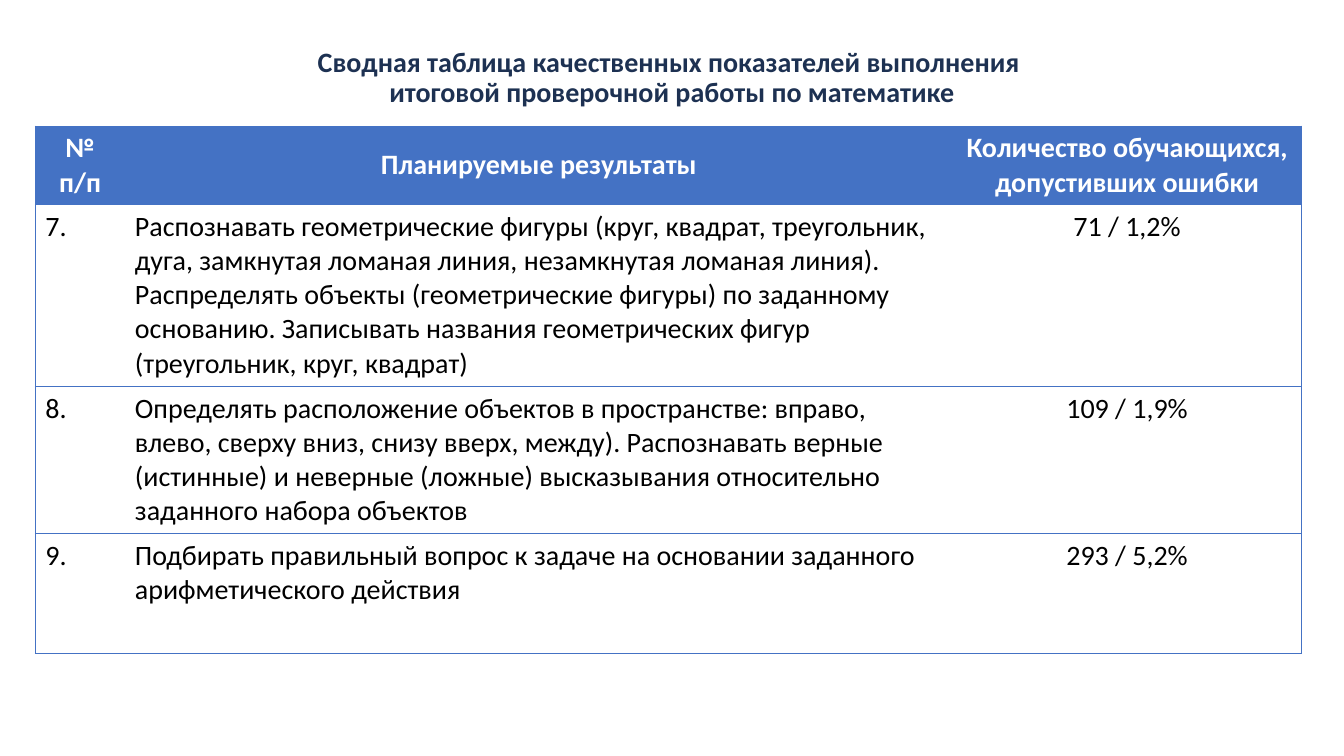
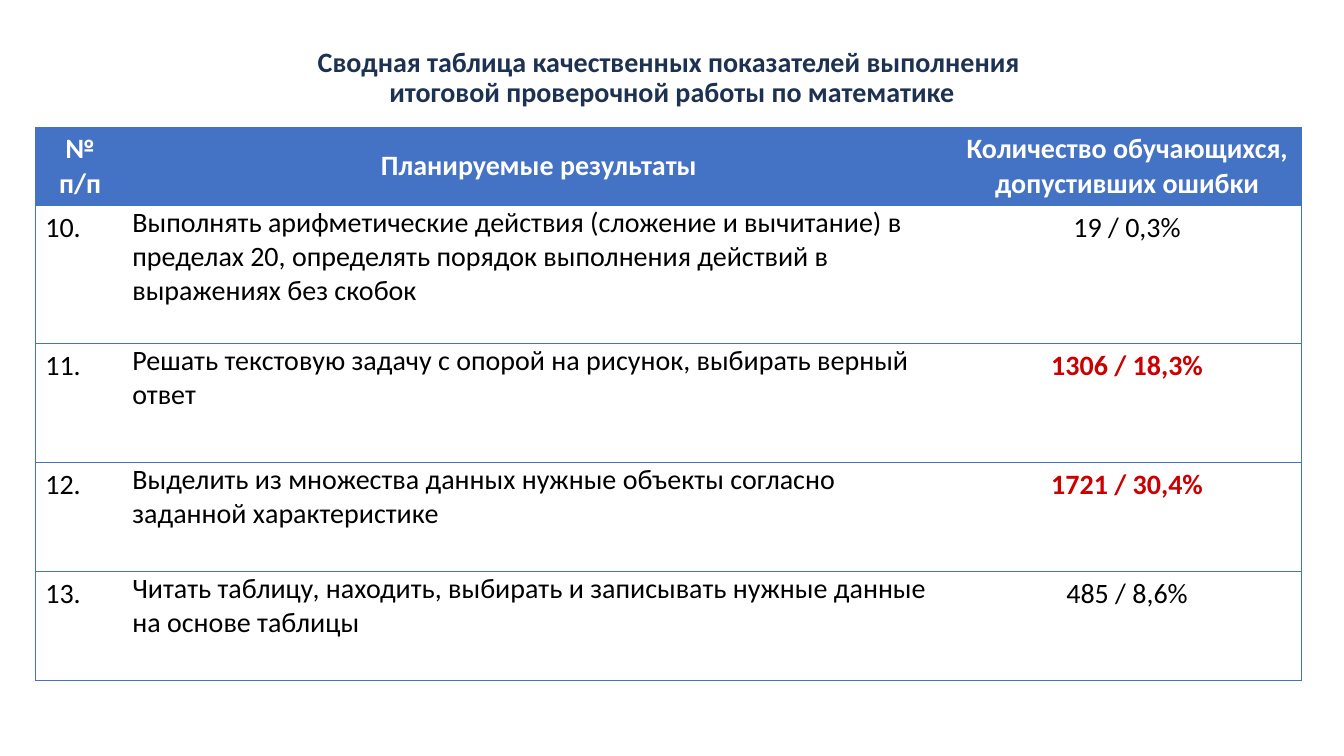
import pptx
import pptx.util
import pptx.dml.color
import pptx.enum.text
import pptx.oxml
import pptx.oxml.ns

Pt = pptx.util.Pt
RGB = pptx.dml.color.RGBColor.from_string
PP_ALIGN = pptx.enum.text.PP_ALIGN
MSO_ANCHOR = pptx.enum.text.MSO_ANCHOR

COLORS = {"title": "1D3152", "accent": "4472C4", "header": "FFFFFF",
          "body": "000000", "alert": "CC0000"}
FONT = "Calibri"
NO_STYLE = "{2D5ABB26-0587-4C30-8999-92F81FD0307C}"
TITLE = ("Сводная таблица качественных показателей выполнения \v"
         "итоговой проверочной работы по математике")
HEADER = ["№ п/п", "Планируемые результаты", "Количество обучающихся, допустивших ошибки"]
HEADER_HEIGHT = 56
COL_WIDTHS = [64, 591.5, 249]
LEFT = 25.2

# Each row: height, number, planned result, errors, alert
SLIDES = [
    {"top": 90, "tight": False, "rows": [
        (130, "7.", "Распознавать геометрические фигуры (круг, квадрат, треугольник, дуга, "
         "замкнутая ломаная линия, незамкнутая ломаная линия).\n"
         "Распределять объекты (геометрические фигуры) по заданному основанию. "
         "Записывать названия геометрических фигур (треугольник, круг, квадрат)",
         "71 / 1,2%", False),
        (105, "8.", "Определять расположение объектов в пространстве: вправо, влево, "
         "сверху вниз, снизу вверх, между). Распознавать верные (истинные) и неверные "
         "(ложные) высказывания относительно заданного набора объектов",
         "109 / 1,9%", False),
        (85.7, "9.", "Подбирать правильный вопрос к задаче на основании заданного "
         "арифметического действия", "293 / 5,2%", False),
    ]},
    {"top": 90.8, "tight": True, "rows": [
        (98.6, "10.", "Выполнять арифметические действия (сложение и вычитание) в пределах 20, "
         "определять порядок выполнения действий в выражениях без скобок",
         "19 / 0,3%", False),
        (85, "11.", "Решать текстовую задачу с опорой на рисунок, выбирать верный ответ",
         "1306 / 18,3%", True),
        (77.8, "12.", "Выделить из множества данных нужные объекты согласно заданной "
         "характеристике", "1721 / 30,4%", True),
        (77.8, "13.", "Читать таблицу, находить, выбирать и записывать нужные данные "
         "на основе таблицы", "485 / 8,6%", False),
    ]},
]


def write(tf, text, color, bold, align):
    tf.text = text
    for p in tf.paragraphs:
        p.alignment = align
        for r in p.runs:
            r.font.name = FONT
            r.font.size = Pt(20)
            r.font.bold = bold
            r.font.color.rgb = RGB(COLORS[color])


def add_borders(cell, sides):
    """Draw thin accent lines on the given sides; call before setting the fill."""
    tc_pr = cell._tc.get_or_add_tcPr()
    for side in sides:
        tc_pr.append(pptx.oxml.parse_xml(
            f'<a:ln{side} {pptx.oxml.ns.nsdecls("a")} w="{Pt(0.5)}"><a:solidFill>'
            f'<a:srgbClr val="{COLORS["accent"]}"/></a:solidFill></a:ln{side}>'))


prs = pptx.Presentation()
prs.slide_width, prs.slide_height = Pt(960), Pt(540)

for content in SLIDES:
    s = prs.slides.add_slide(prs.slide_layouts[6])

    title = s.shapes.add_textbox(Pt(55.5), Pt(19.5), Pt(849), Pt(72.7))
    tf = title.text_frame
    tf.word_wrap = True
    tf.vertical_anchor = MSO_ANCHOR.MIDDLE
    write(tf, TITLE, "title", True, PP_ALIGN.CENTER)
    tf.paragraphs[0].line_spacing = 0.9

    rows = [(HEADER_HEIGHT, *HEADER, False)] + content["rows"]
    heights = [row[0] for row in rows]
    frame = s.shapes.add_table(len(rows), len(COL_WIDTHS), Pt(LEFT), Pt(content["top"]),
                               Pt(sum(COL_WIDTHS)), Pt(sum(heights)))
    table = frame.table
    table.first_row = table.horz_banding = False
    table._tbl.tblPr[0].text = NO_STYLE
    for column, width in zip(table.columns, COL_WIDTHS):
        column.width = Pt(width)

    for i, (height, *texts, alert) in enumerate(rows):
        table.rows[i].height = Pt(height)
        is_header = i == 0
        for j, text in enumerate(texts):
            cell = table.cell(i, j)
            is_alert = alert and j == 2
            color = "header" if is_header else "alert" if is_alert else "body"
            centred = is_header or j == 2
            write(cell.text_frame, text, color, is_header or is_alert,
                  PP_ALIGN.CENTER if centred else PP_ALIGN.LEFT)
            add_borders(cell, (["L"], [], ["R"])[j] + ["T", "B"])
            if is_header:
                cell.vertical_anchor = MSO_ANCHOR.MIDDLE
                cell.fill.solid()
                cell.fill.fore_color.rgb = RGB(COLORS["accent"])
            else:
                cell.vertical_anchor = MSO_ANCHOR.TOP
                cell.fill.background()
                if content["tight"] and j == 1:
                    cell.margin_left = cell.margin_right = Pt(5.4)
                    cell.margin_top = cell.margin_bottom = Pt(0)

prs.save("out.pptx")
